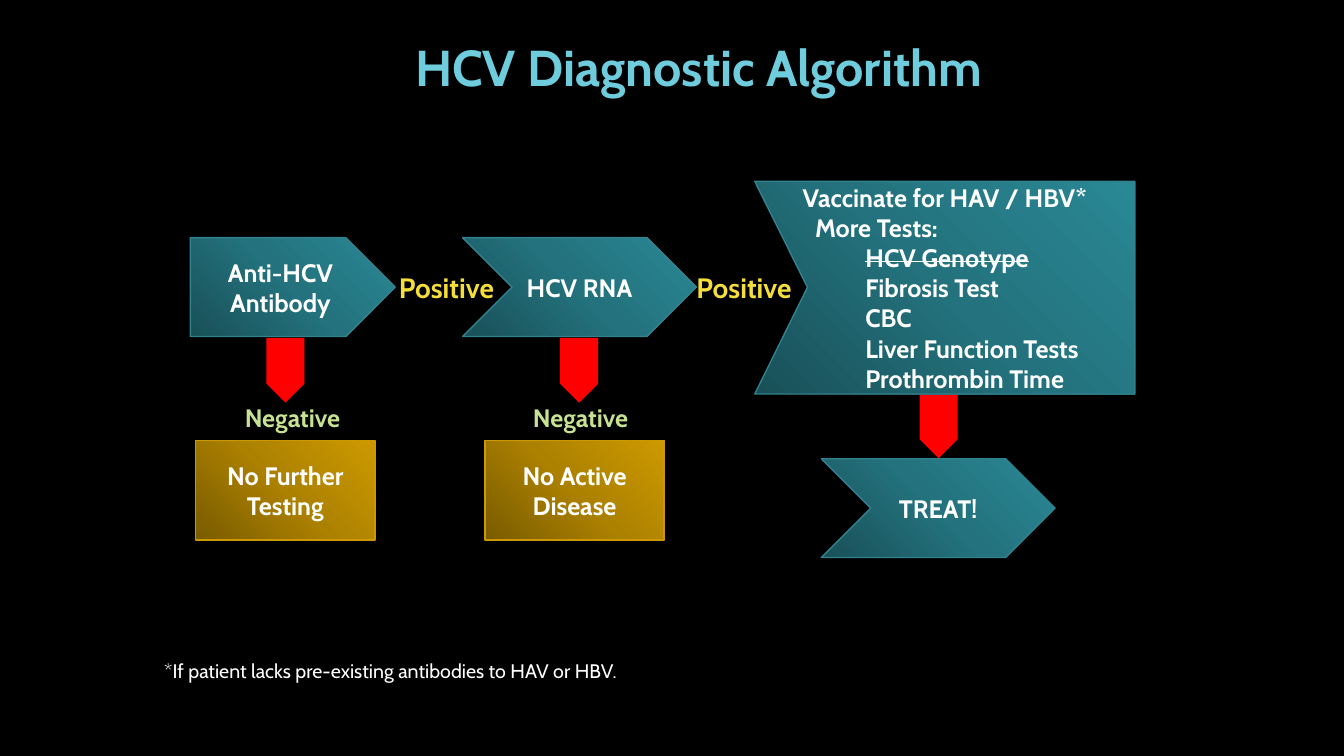
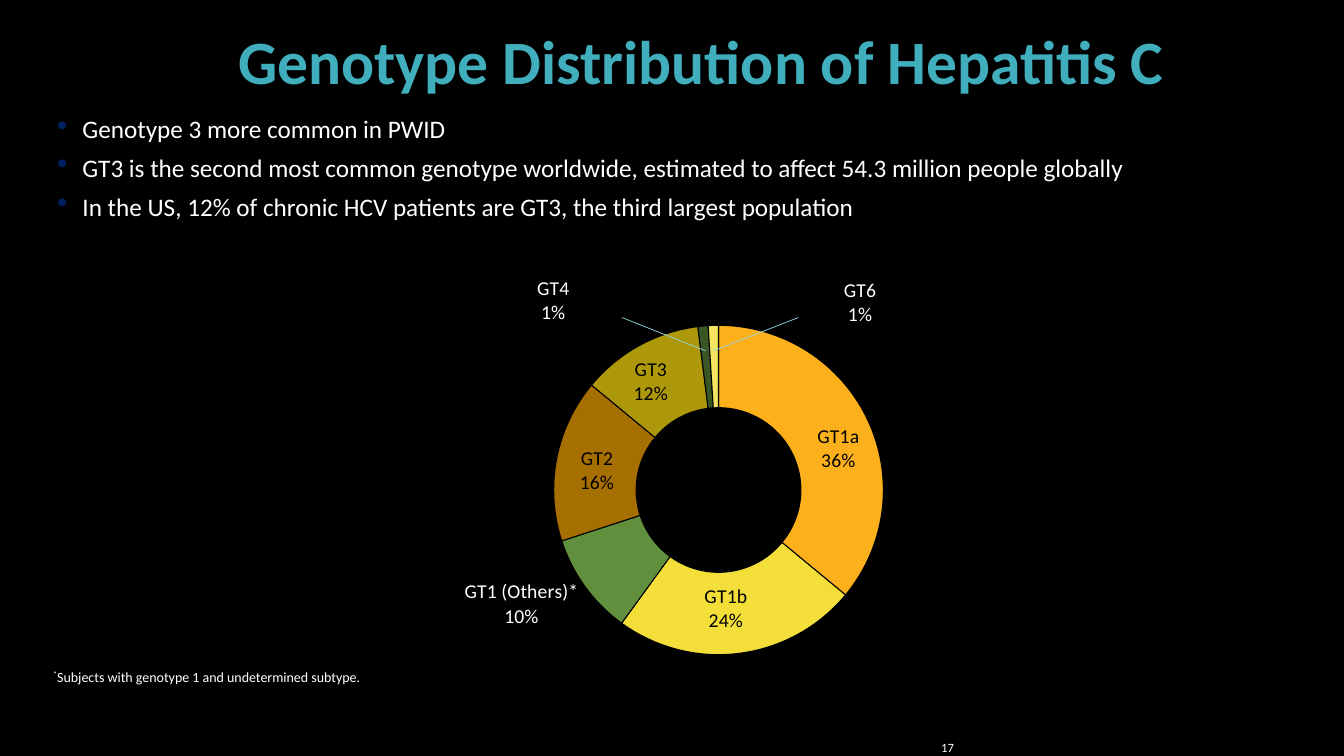
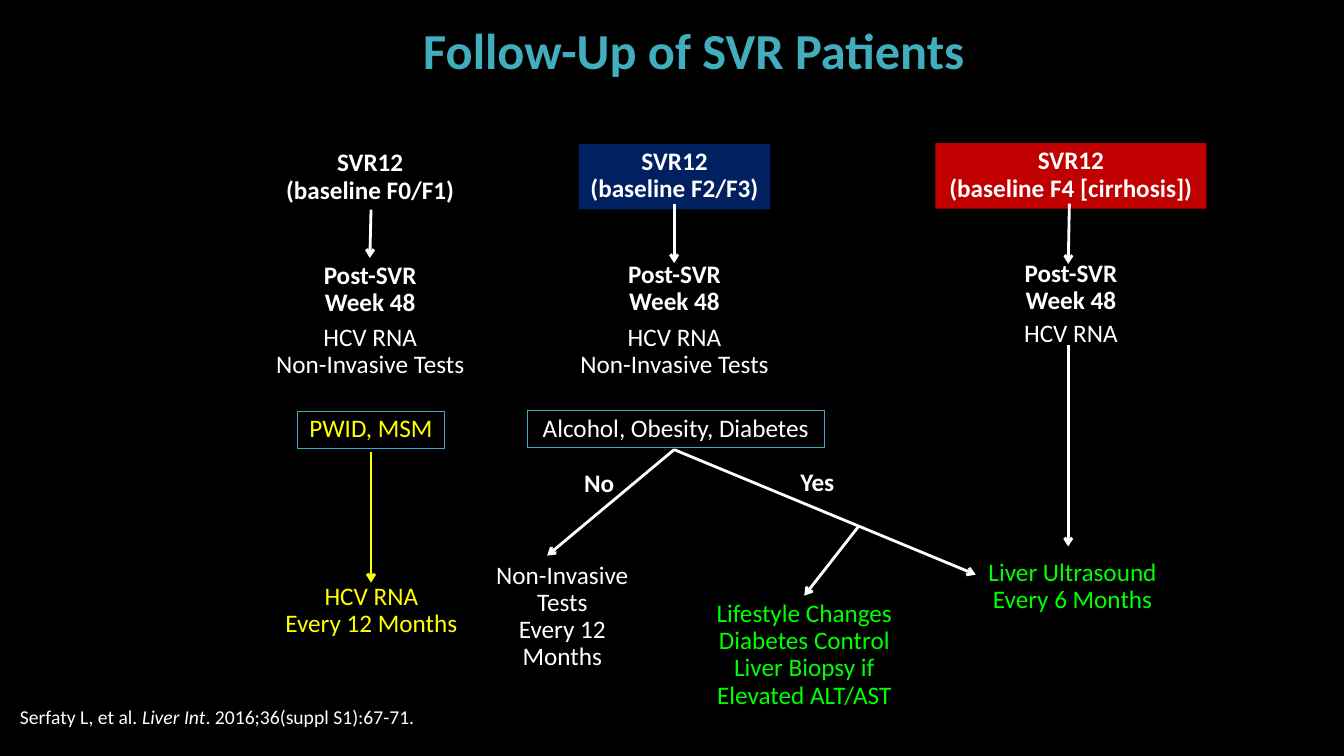
from copy import deepcopy
from dataclasses import dataclass
from typing import Optional

from pptx import Presentation
from pptx.chart.data import CategoryChartData
from pptx.dml.color import RGBColor
from pptx.enum.chart import XL_CHART_TYPE
from pptx.enum.shapes import MSO_CONNECTOR, MSO_SHAPE
from pptx.enum.text import MSO_ANCHOR, PP_ALIGN
from pptx.oxml import parse_xml
from pptx.oxml.ns import nsdecls, qn
from pptx.util import Cm, Pt

# Shared look
BLACK, WHITE, RED = "000000", "FFFFFF", "FF0000"
YELLOW, GREEN = "FFFF00", "00FF00"
TEAL, TITLE_EDGE = "41AEBD", "2D7983"
TEAL_STEPS = ("195058", "23727D", "2A8895")
GOLD_STEPS = ("795B00", "AC8100", "CC9900")
TEAL_EDGE, GOLD_EDGE = "31828E", "CC9900"


@dataclass(frozen=True)
class Style:
    size: float = 18
    color: str = WHITE
    bold: bool = False
    font: str = "Calibri"
    spacing: Optional[float] = None
    align: PP_ALIGN = PP_ALIGN.CENTER


@dataclass(frozen=True)
class Box:
    left: float
    top: float
    width: float
    height: float

    def lengths(self) -> tuple:
        return Cm(self.left), Cm(self.top), Cm(self.width), Cm(self.height)


def centered(center: float, top: float, width: float, height: float) -> Box:
    return Box(center - width / 2, top, width, height)


@dataclass(frozen=True)
class Step:
    text: str
    box: Box
    outline: MSO_SHAPE
    steps: tuple = TEAL_STEPS
    edge: str = TEAL_EDGE


@dataclass(frozen=True)
class Caption:
    text: str
    box: Box
    style: Style


@dataclass(frozen=True)
class Arrow:
    start: tuple
    end: tuple
    color: str = WHITE


@dataclass(frozen=True)
class Column:
    center: float
    shift: float
    baseline: str
    fill: str
    baseline_width: float
    tests: str
    tests_top: float


@dataclass(frozen=True)
class Genotype:
    category: str
    label: str
    value: float
    color: str
    text_color: str
    offset: tuple


STEP_STYLE = Style(bold=True, font="Cabin")
FLOW = Style(spacing=0.9)
FLOW_BOLD = Style(spacing=0.9, bold=True)
FLOW_YELLOW = Style(spacing=0.9, color=YELLOW)
FLOW_GREEN = Style(spacing=0.9, color=GREEN)


def rgb(color: str) -> RGBColor:
    return RGBColor.from_string(color)


# Text
def style_run(run, style: Style) -> None:
    run.font.size = Pt(style.size)
    run.font.name = style.font
    run.font.bold = style.bold
    run.font.color.rgb = rgb(style.color)


def append_run(paragraph, text: str, style: Style):
    run = paragraph.add_run()
    run.text = text
    style_run(run, style)
    return run


def write(frame, text: str, style: Style, wrap: bool = True) -> None:
    frame.text = text
    frame.word_wrap = wrap
    for paragraph in frame.paragraphs:
        paragraph.alignment = style.align
        if style.spacing:
            paragraph.line_spacing = style.spacing
        for run in paragraph.runs:
            style_run(run, style)


def indent(paragraph, left: float, first: float = 0) -> None:
    properties = paragraph._p.get_or_add_pPr()
    properties.set("marL", str(Cm(left)))
    properties.set("indent", str(Cm(first)))


def add_text(slide, text: str, box: Box, style: Style, wrap: bool = True):
    frame = slide.shapes.add_textbox(*box.lengths()).text_frame
    write(frame, text, style, wrap)
    return frame


def add_title(slide, text: str, box: Box, style: Style, edged: bool = True) -> None:
    paragraph = add_text(slide, text, box, style).paragraphs[0]
    if edged:
        indent(paragraph, 1.35)
        paragraph.runs[0]._r.get_or_add_rPr().insert(0, parse_xml(
            f'<a:ln {nsdecls("a")} w="6350"><a:solidFill>'
            f'<a:srgbClr val="{TITLE_EDGE}"/></a:solidFill></a:ln>'))


# Shapes and lines
def paint(shape, fill: Optional[str], edge: Optional[str], width: float = 0.75) -> None:
    shape.shadow.inherit = False
    if fill:
        shape.fill.solid()
        shape.fill.fore_color.rgb = rgb(fill)
    else:
        shape.fill.background()
    if edge:
        shape.line.color.rgb = rgb(edge)
        shape.line.width = Pt(width)
    else:
        shape.line.fill.background()


def paint_gradient(shape, steps: tuple, edge: str) -> None:
    paint(shape, None, edge, 1)
    shape.fill.gradient()
    shape.fill.gradient_angle = 45
    stop_list = shape._element.spPr.find(".//" + qn("a:gsLst"))
    stop_list.insert(1, deepcopy(stop_list[0]))
    for stop, position, color in zip(shape.fill.gradient_stops, (0, 0.5, 1), steps):
        stop.position = position
        stop.color.rgb = rgb(color)


def add_step(slide, step: Step) -> None:
    shape = slide.shapes.add_shape(step.outline, *step.box.lengths())
    paint_gradient(shape, step.steps, step.edge)
    write(shape.text_frame, step.text, STEP_STYLE)


def add_panel(slide, text: str, box: Box, style: Style,
              fill: Optional[str] = None, edge: Optional[str] = None) -> None:
    shape = slide.shapes.add_shape(MSO_SHAPE.RECTANGLE, *box.lengths())
    paint(shape, fill, edge)
    write(shape.text_frame, text, style, wrap=False)
    shape.text_frame.vertical_anchor = MSO_ANCHOR.TOP


def add_line(slide, start: tuple, end: tuple, color: str, width: float,
             arrow: bool = False) -> None:
    line = slide.shapes.add_connector(
        MSO_CONNECTOR.STRAIGHT, *(Cm(value) for value in start + end))
    line.line.color.rgb = rgb(color)
    line.line.width = Pt(width)
    if arrow:
        line.line._get_or_add_ln().append(
            parse_xml(f'<a:tailEnd {nsdecls("a")} type="arrow"/>'))
    line._element.spPr.append(parse_xml(f'<a:effectLst {nsdecls("a")}/>'))


# Slide 1: diagnostic algorithm
def build_algorithm(slide) -> None:
    for left, top in ((6.73, 8.53), (14.13, 8.53), (23.19, 9.93)):
        drop = slide.shapes.add_shape(
            MSO_SHAPE.DOWN_ARROW, *Box(left, top, 0.93, 1.6).lengths())
        drop.adjustments[0] = 1
        drop.adjustments[1] = 0.5
        paint(drop, RED, RED)

    add_title(slide, "HCV Diagnostic Algorithm", Box(0.13, 0.79, 33.6, 3.12),
              Style(36, "6ECCDD", True, "Cabin"))
    add_text(slide, "*If patient lacks pre-existing antibodies to HAV or HBV.",
             Box(3.89, 16.48, 14, 0.86),
             Style(14, font="Cabin", align=PP_ALIGN.LEFT))

    for step in (
        Step("Anti-HCV Antibody", Box(4.8, 5.99, 5.16, 2.49), MSO_SHAPE.PENTAGON),
        Step("HCV RNA", Box(11.66, 5.99, 5.89, 2.49), MSO_SHAPE.CHEVRON),
        Step("TREAT!", Box(20.7, 11.56, 5.89, 2.49), MSO_SHAPE.CHEVRON),
        Step("No Further Testing", Box(4.93, 11.1, 4.52, 2.51),
             MSO_SHAPE.RECTANGLE, GOLD_STEPS, GOLD_EDGE),
        Step("No Active Disease", Box(12.22, 11.1, 4.52, 2.51),
             MSO_SHAPE.RECTANGLE, GOLD_STEPS, GOLD_EDGE),
    ):
        add_step(slide, step)

    # Results between the steps
    positive = Style(20, "F4DE3A", True, "Cabin", 0.9)
    negative = Style(18, "C7E292", True, "Cabin", 0.9)
    for result in (
        Caption("Positive", Box(9.75, 6.65, 3, 1.27), positive),
        Caption("Positive", Box(17.25, 6.65, 3, 1.27), positive),
        Caption("Negative", Box(5.87, 9.93, 3, 1.27), negative),
        Caption("Negative", Box(13.13, 9.93, 3, 1.27), negative),
    ):
        frame = add_text(slide, result.text, result.box, result.style)
        frame.margin_left = frame.margin_right = 0
        frame.vertical_anchor = MSO_ANCHOR.MIDDLE

    # Further tests, in a block with a notched left side
    builder = slide.shapes.build_freeform(Cm(19.02), Cm(4.57))
    builder.add_line_segments(
        [(Cm(x), Cm(y)) for x, y in
         ((28.6, 4.57), (28.6, 9.93), (19.02, 9.93), (20.35, 7.24))], close=True)
    further_tests = builder.convert_to_shape()
    paint_gradient(further_tests, TEAL_STEPS, TEAL_EDGE)
    frame = further_tests.text_frame
    write(frame, "Vaccinate for HAV / HBV*\nMore Tests:\nHCV Genotype\nFibrosis Test\n"
          "CBC\nLiver Function Tests\nProthrombin Time", STEP_STYLE)
    frame.vertical_anchor = MSO_ANCHOR.MIDDLE
    for number, paragraph in enumerate(frame.paragraphs[1:]):
        paragraph.alignment = PP_ALIGN.LEFT
        paragraph.level = min(number + 1, 2)
        indent(paragraph, 1.27 * paragraph.level)
    frame.paragraphs[2].runs[0]._r.get_or_add_rPr().set("strike", "sngStrike")


# Slide 2: genotype distribution
GENOTYPES = (
    Genotype("Genotype 1a", "GT1a\n36%", 36, "FCB11C", BLACK, (0.01, 0.03)),
    Genotype("Genotype 1b", "GT1b\n24%", 24, "F4DE3A", BLACK, (-0.01, -0.01)),
    Genotype("Genotype 1 (others)", "GT1 (Others)*\n10%", 10, "608F3D", WHITE, (-0.12, 0.11)),
    Genotype("Genotype 2", "GT2\n16%", 16, "A66F02", BLACK, (0, 0.01)),
    Genotype("Genotype 3", "GT3\n12%", 12, "AC980A", BLACK, (-0.01, 0)),
    Genotype("Genotype 4", "GT4\n1%", 1, "3A5625", WHITE, (-0.19, -0.18)),
    Genotype("Genotype 5", "GT5\n0.03%", 0, "FDC149", WHITE, (0, -0.18)),
    Genotype("Genotype 6", "GT6\n1%", 1, "F6E561", WHITE, (0.18, -0.17)),
)


def manual_layout(inner: str):
    return parse_xml(f'<c:layout {nsdecls("c")}><c:manualLayout>{inner}'
                     '</c:manualLayout></c:layout>')


def add_genotype_ring(slide) -> None:
    data = CategoryChartData()
    data.categories = [genotype.category for genotype in GENOTYPES]
    data.add_series("Series 1", [genotype.value for genotype in GENOTYPES])
    chart = slide.shapes.add_chart(
        XL_CHART_TYPE.DOUGHNUT, *Box(7.19, 6.96, 20.37, 9.55).lengths(), data).chart
    chart.has_legend = False
    chart.has_title = False
    chart.font.size = Pt(14)
    chart.font.name = "Calibri"
    chart.font.color.rgb = rgb(WHITE)
    plot = chart.plots[0]
    plot.vary_by_categories = True

    # Ring size and place
    plot_area = chart._chartSpace.chart.plotArea
    for old_layout in plot_area.findall(qn("c:layout")):
        plot_area.remove(old_layout)
    plot_area.insert(0, manual_layout(
        '<c:layoutTarget val="inner"/><c:xMode val="edge"/><c:yMode val="edge"/>'
        '<c:x val="0.286"/><c:y val="0.13"/><c:w val="0.5"/><c:h val="0.87"/>'))
    for hole in plot_area.iter(qn("c:holeSize")):
        hole.set("val", "43")

    # Segments and their labels
    series = plot.series[0]
    for number, genotype in enumerate(GENOTYPES):
        point = series.points[number]
        point.format.fill.solid()
        point.format.fill.fore_color.rgb = rgb(genotype.color)
        point.format.line.color.rgb = rgb(BLACK)
        point.format.line.width = Pt(0.75)
        write(point.data_label.text_frame, genotype.label,
              Style(14, genotype.text_color))
    for label, genotype in zip(series._element.iter(qn("c:dLbl")), GENOTYPES):
        x, y = genotype.offset
        label.find(qn("c:idx")).addnext(
            manual_layout(f'<c:x val="{x}"/><c:y val="{y}"/>'))
    for leader in series._element.iter(qn("c:showLeaderLines")):
        leader.set("val", "0")


def build_genotypes(slide) -> None:
    add_title(slide, "Genotype Distribution of Hepatitis C",
              Box(1.5, 0.66, 32.36, 2.72), Style(44, TEAL, True, spacing=0.9), edged=False)
    page = add_text(slide, "17", Box(23.47, 18.62, 8.38, 0.43),
                    Style(9, align=PP_ALIGN.LEFT))
    page.vertical_anchor = MSO_ANCHOR.MIDDLE

    add_genotype_ring(slide)
    for start, end in (((15.67, 8), (17.78, 8.84)), ((20.12, 8), (17.98, 8.84))):
        add_line(slide, start, end, "94D7E4", 0.5)

    facts = add_text(
        slide, "Genotype 3 more common in PWID\n"
        "GT3 is the second most common genotype worldwide, "
        "estimated to affect 54.3 million people globally\n"
        "In the US, 12% of chronic HCV patients are GT3, the third largest population",
        Box(1.19, 2.74, 32.36, 3.99), Style(align=PP_ALIGN.LEFT))
    for paragraph in facts.paragraphs:
        indent(paragraph, 0.64, -0.64)
        for bullet in ('<a:buClr {}><a:srgbClr val="002060"/></a:buClr>',
                       '<a:buSzPct {} val="120000"/>', '<a:buChar {} char="•"/>'):
            paragraph._p.get_or_add_pPr().append(parse_xml(bullet.format(nsdecls("a"))))
        paragraph.space_after = Pt(6)

    note_style = Style(10, align=PP_ALIGN.LEFT)
    note = add_text(slide, "*", Box(1.09, 16.71, 29.97, 0.69), note_style).paragraphs[0]
    note.runs[0]._r.get_or_add_rPr().set("baseline", "30000")
    append_run(note, "Subjects with genotype 1 and undetermined subtype.", note_style)


# Slide 3: follow-up
COLUMNS = (
    Column(9.33, 0, "F0/F1", BLACK, 4.83, "HCV RNA\nNon-Invasive Tests", 8.05),
    Column(17, -0.03, "F2/F3", "002060", 4.83, "HCV RNA\nNon-Invasive Tests", 8.05),
    Column(26.99, -0.05, "F4 [cirrhosis]", "C00000", 6.83, "HCV RNA", 7.95),
)
OUTCOMES = (
    Caption("HCV RNA\nEvery 12 Months", centered(9.36, 14.58, 4.9, 1.65), FLOW_YELLOW),
    Caption("Lifestyle Changes\nDiabetes Control\nLiver Biopsy if\nElevated ALT/AST",
            centered(20.27, 15.01, 5.23, 3.02), FLOW_GREEN),
    Caption("Liver Ultrasound\nEvery 6 Months", centered(27.03, 13.97, 4.88, 1.65), FLOW_GREEN),
    Caption("No", centered(15.1, 11.73, 1.35, 0.94), FLOW_BOLD),
    Caption("Yes", centered(20.6, 11.71, 1.47, 0.94), FLOW_BOLD),
)
ARROWS = (
    Arrow((9.35, 5.28), (9.32, 6.5)),
    Arrow((16.99, 5.13), (16.99, 6.63)),
    Arrow((26.95, 5.13), (26.92, 6.65)),
    Arrow((26.92, 8.69), (26.92, 13.77)),
    Arrow((16.99, 11.33), (24.59, 14.48)),
    Arrow((21.64, 13.26), (20.27, 15.01)),
    Arrow((16.99, 11.33), (13.79, 14)),
    Arrow((9.35, 11.38), (9.35, 14.68), YELLOW),
)


def build_follow_up(slide) -> None:
    add_title(slide, "Follow-Up of SVR Patients", Box(2.92, 0.36, 27.79, 2.34),
              Style(36, TEAL, True))
    citation_style = Style(14, align=PP_ALIGN.LEFT)
    citation = add_text(slide, "Serfaty L, et al. ", Box(0.25, 17.63, 17.17, 0.86),
                        citation_style).paragraphs[0]
    append_run(citation, "Liver Int", citation_style).font.italic = True
    append_run(citation, ". 2016;36(suppl S1):67-71.", citation_style)

    for column in COLUMNS:
        add_panel(slide, f"SVR12\n(baseline {column.baseline})",
                  centered(column.center, 3.66 + column.shift, column.baseline_width, 1.65),
                  FLOW_BOLD, fill=column.fill)
        add_text(slide, "Post-SVR\nWeek 48",
                 centered(column.center, 6.5 + column.shift, 3.12, 1.65), FLOW_BOLD, wrap=False)
        add_text(slide, column.tests,
                 centered(column.center, column.tests_top, 5.44, 1.65), FLOW, wrap=False)

    # Risk groups
    add_panel(slide, "PWID, MSM", centered(9.35, 10.36, 3.71, 0.94), FLOW_YELLOW, edge=TEAL)
    add_panel(slide, "Alcohol, Obesity, Diabetes", centered(17.03, 10.34, 7.49, 0.94),
              FLOW, edge=TEAL)

    # Outcomes and the paths to them
    add_text(slide, "Non-Invasive Tests\nEvery 12 Months",
             centered(14.17, 14.05, 4.72, 3.02), FLOW)
    for outcome in OUTCOMES:
        add_text(slide, outcome.text, outcome.box, outcome.style, wrap=False)
    for arrow in ARROWS:
        add_line(slide, arrow.start, arrow.end, arrow.color, 2, arrow=True)


def main() -> None:
    deck = Presentation()
    deck.slide_width, deck.slide_height = Cm(33.87), Cm(19.05)
    backdrop = deck.slide_master.background.fill
    backdrop.solid()
    backdrop.fore_color.rgb = rgb(BLACK)
    for build in (build_algorithm, build_genotypes, build_follow_up):
        build(deck.slides.add_slide(deck.slide_layouts[6]))
    deck.save("out.pptx")


if __name__ == "__main__":
    main()
